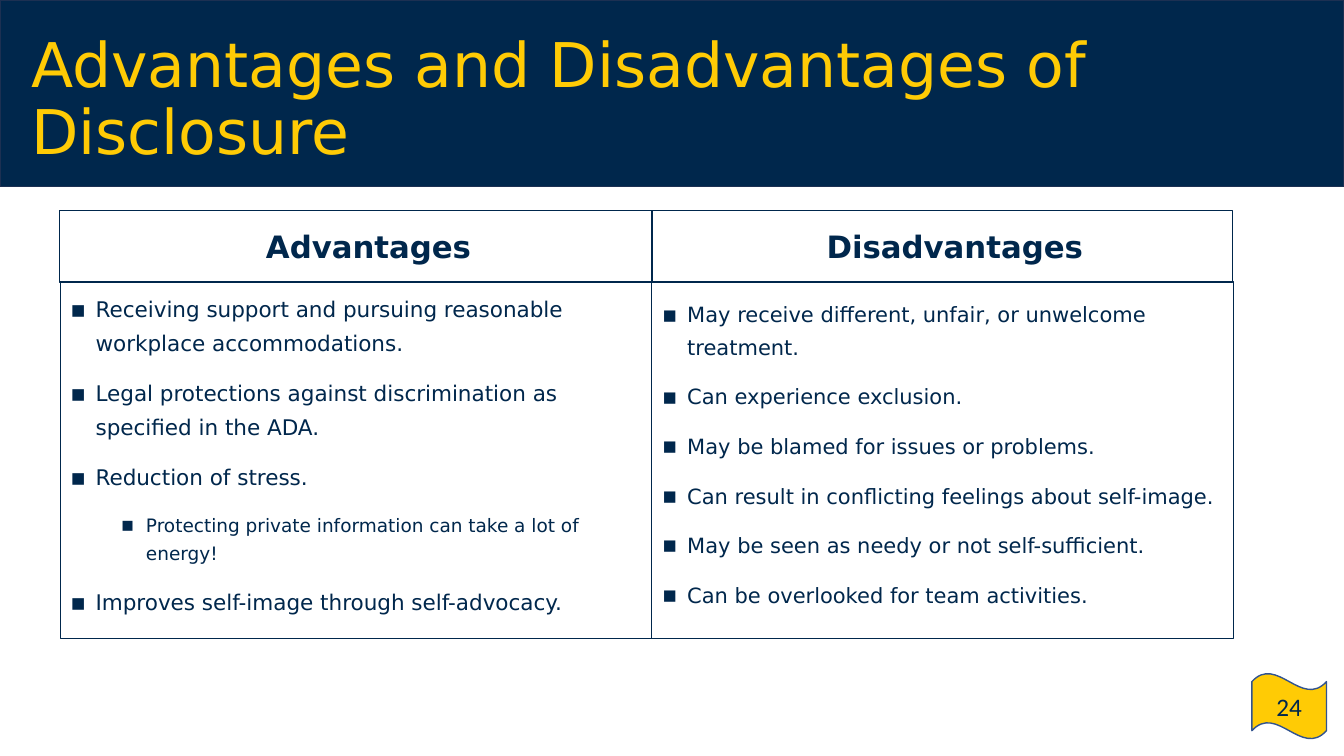
"""Build a slide comparing the advantages and disadvantages of disclosure."""
from pptx import Presentation
from pptx import util as u
from pptx.dml.color import RGBColor
from pptx.enum import shapes, text
from pptx.oxml.ns import qn
from lxml import etree

NAVY, GOLD = "00274C", "FFCB05"
FONT = "DejaVu Sans"
TITLE = "Advantages and Disadvantages of Disclosure"
PAGE = "24"
COLUMNS = [
    {"head": "Advantages", "head_x": (1.5, 14.94), "list_x": (1.52, 14.91),
     "size": 15.4, "bottom": 0.53, "items": [
         (0, "Receiving support and pursuing reasonable workplace accommodations."),
         (0, "Legal protections against discrimination as specified in the ADA."),
         (0, "Reduction of stress."),
         (1, "Protecting private information can take a lot of energy!"),
         (0, "Improves self-image through self-advocacy.")]},
    {"head": "Disadvantages", "head_x": (16.43, 14.63), "list_x": (16.43, 14.66),
     "size": 15, "bottom": 0.58, "items": [
         (0, "May receive different, unfair, or unwelcome treatment."),
         (0, "Can experience exclusion."),
         (0, "May be blamed for issues or problems."),
         (0, "Can result in conflicting feelings about self-image."),
         (0, "May be seen as needy or not self-sufficient."),
         (0, "Can be overlooked for team activities.")]},
]
HEAD_Y, LIST_Y = (5.31, 1.8), (7.09, 8.99)
SUB_SIZE = 13.2
INDENT = 0.635


def rgb(value):
    return RGBColor.from_string(value)


def put(obj, values):
    for name, value in values.items():
        setattr(obj, name, value)


def place(sp, x, y, w, h):
    put(sp, {"left": u.Cm(x), "top": u.Cm(y), "width": u.Cm(w), "height": u.Cm(h)})


def outline(sp, color, width):
    sp.line.color.rgb = rgb(color)
    sp.line.width = u.Pt(width)


def frame(sp, bottom=0.13):
    tf = sp.text_frame
    put(tf, {"word_wrap": True, "auto_size": text.MSO_AUTO_SIZE.NONE,
             "vertical_anchor": text.MSO_ANCHOR.MIDDLE, "margin_bottom": u.Cm(bottom)})
    return tf


def write(p, words, size, color=NAVY, font=FONT, bold=False, **layout):
    put(p, {"space_before": u.Pt(0), **layout})
    r = p.add_run()
    r.text = words
    put(r.font, {"size": u.Pt(size), "name": font, "bold": bold})
    r.font.color.rgb = rgb(color)


def indent(p, steps):
    pPr = p._p.get_or_add_pPr()
    pPr.set("marL", str(u.Cm(steps * INDENT)))
    pPr.set("indent", str(-u.Cm(INDENT)))
    return pPr


def bullet(p, level):
    pPr = indent(p, 1 + 2 * level)
    color = etree.SubElement(pPr, qn("a:buClr"))
    etree.SubElement(color, qn("a:srgbClr"), val=NAVY)
    etree.SubElement(pPr, qn("a:buSzPct"), val="108000")
    etree.SubElement(pPr, qn("a:buFont"), typeface=FONT)
    etree.SubElement(pPr, qn("a:buChar"), char="▪")


def add_shape(s, kind, box, fill, line):
    sp = s.shapes.add_shape(kind, *map(u.Cm, box))
    sp.shadow.inherit = False
    sp.fill.solid()
    sp.fill.fore_color.rgb = rgb(fill)
    outline(sp, line, 1)
    return sp


def add_column(head, body, col):
    for sp, (x, w), (y, h) in ((head, col["head_x"], HEAD_Y), (body, col["list_x"], LIST_Y)):
        place(sp, x, y, w, h)
        outline(sp, NAVY, 0.75)
    p = frame(head).paragraphs[0]
    write(p, col["head"], 22, bold=True, alignment=text.PP_ALIGN.CENTER)
    indent(p, 2)
    tf = frame(body, col["bottom"])
    for i, (level, words) in enumerate(col["items"]):
        p = tf.add_paragraph() if i else tf.paragraphs[0]
        write(p, words, SUB_SIZE if level else col["size"], level=level,
              line_spacing=1.3, space_before=u.Pt(12))
        bullet(p, level)


def main():
    prs = Presentation()
    prs.slide_width, prs.slide_height = u.Cm(33.87), u.Cm(19.05)
    s = prs.slides.add_slide(prs.slide_layouts.get_by_name("Comparison"))
    title, *parts = s.placeholders

    band = add_shape(s, shapes.MSO_SHAPE.RECTANGLE, (0, 0, 33.87, 4.7), NAVY, "1C3052")
    s.shapes.element.insert(2, band.element)
    place(title, 0.53, 0.71, 29.21, 3.68)
    write(frame(title).paragraphs[0], TITLE, 44, GOLD,
          alignment=text.PP_ALIGN.LEFT, line_spacing=0.9)

    for col, head, body in zip(COLUMNS, parts[::2], parts[1::2]):
        add_column(head, body, col)

    flag = add_shape(s, shapes.MSO_SHAPE.WAVE, (31.55, 16.97, 1.88, 1.65), GOLD, "31538F")
    write(frame(flag).paragraphs[0], PAGE, 18, font="Calibri",
          alignment=text.PP_ALIGN.CENTER)
    prs.save("out.pptx")


if __name__ == "__main__":
    main()
